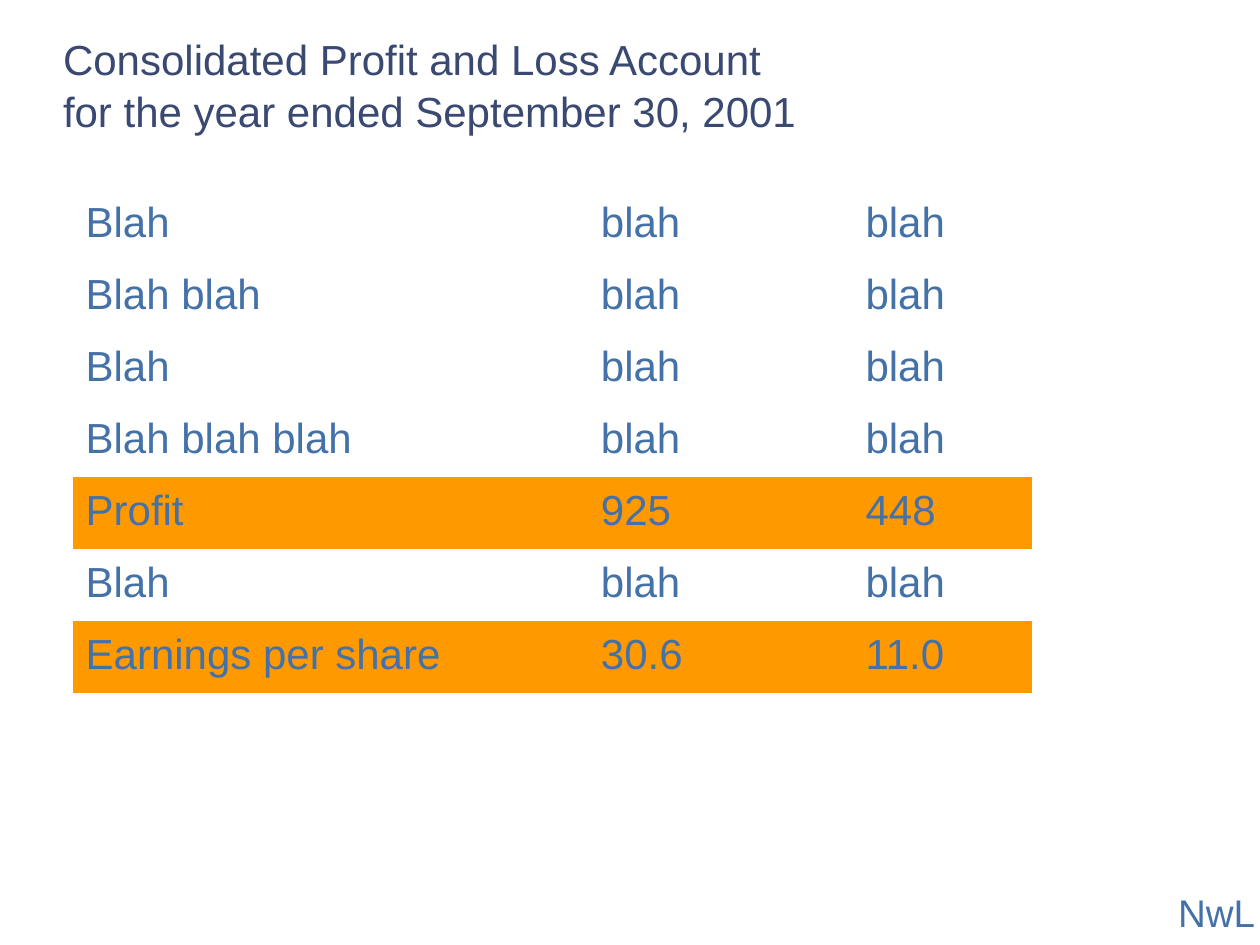
from pptx import Presentation
from pptx.dml.color import RGBColor
from pptx.enum import text as t
from pptx.oxml import ns
from pptx.util import Inches, Pt

NAVY = RGBColor(0x3A, 0x49, 0x72)
BLUE = RGBColor(0x44, 0x71, 0xA8)
ORANGE = RGBColor(0xFF, 0x99, 0x00)
PLAIN = "{2D5ABB26-0587-4C30-8999-92F81FD0307C}"

TITLE = "Consolidated Profit and Loss Account\vfor the year ended September 30, 2001"
FIRM = "NwL"
ROWS = [
    ("Blah", "blah", "blah"),
    ("Blah blah", "blah", "blah"),
    ("Blah", "blah", "blah"),
    ("Blah blah blah", "blah", "blah"),
    ("Profit", "925", "448"),
    ("Blah", "blah", "blah"),
    ("Earnings per share", "30.6", "11.0"),
]
MARKED = {"Profit", "Earnings per share"}
WIDTHS = [4.09, 2.1, 1.42]
HEIGHT = 4


def style(para, size, color, align=t.PP_ALIGN.LEFT):
    para.alignment = align
    para.font.name = "Arial"
    para.font.size = Pt(size)
    para.font.color.rgb = color


def inset(frame, left, top, right, bottom):
    frame.margin_left, frame.margin_top = Inches(left), Inches(top)
    frame.margin_right, frame.margin_bottom = Inches(right), Inches(bottom)
    frame.word_wrap = True


def add_title(slide):
    title = slide.shapes.title
    title.left, title.top = Inches(0), Inches(0)
    title.width, title.height = Inches(8.67), Inches(1.42)
    frame = title.text_frame
    frame.text = TITLE
    frame.auto_size = t.MSO_AUTO_SIZE.NONE
    frame.vertical_anchor = t.MSO_ANCHOR.TOP
    inset(frame, 0.5, 0.25, 0.5, 0.25)
    para = frame.paragraphs[0]
    para.line_spacing = 1.04
    style(para, 24, NAVY)


def add_firm(slide):
    box = slide.shapes.add_textbox(Inches(7.25), Inches(7), Inches(2.71), Inches(0.42))
    frame = box.text_frame
    frame.text = FIRM
    frame.vertical_anchor = t.MSO_ANCHOR.BOTTOM
    inset(frame, 0.1, 0.05, 0, 0)
    style(frame.paragraphs[0], 22, BLUE, t.PP_ALIGN.RIGHT)


def add_account(slide):
    table = slide.shapes.add_table(
        len(ROWS), len(WIDTHS), Inches(0.58), Inches(1.5),
        Inches(sum(WIDTHS)), Inches(HEIGHT)).table
    table.first_row = table.horz_banding = False
    table._tbl.tblPr.find(ns.qn("a:tableStyleId")).text = PLAIN
    for col, width in zip(table.columns, WIDTHS):
        col.width = Inches(width)
    for row, words in zip(table.rows, ROWS):
        row.height = Inches(HEIGHT / len(ROWS))
        for cell, word in zip(row.cells, words):
            cell.text = word
            if words[0] in MARKED:
                cell.fill.solid()
                cell.fill.fore_color.rgb = ORANGE
            else:
                cell.fill.background()
            para = cell.text_frame.paragraphs[0]
            para.line_spacing = 1.09
            style(para, 24, BLUE)


def main():
    deck = Presentation()
    deck.slide_width, deck.slide_height = Inches(10), Inches(7.5)
    slide = deck.slides.add_slide(deck.slide_layouts[5])
    add_firm(slide)
    add_title(slide)
    add_account(slide)
    deck.save("out.pptx")


if __name__ == "__main__":
    main()
